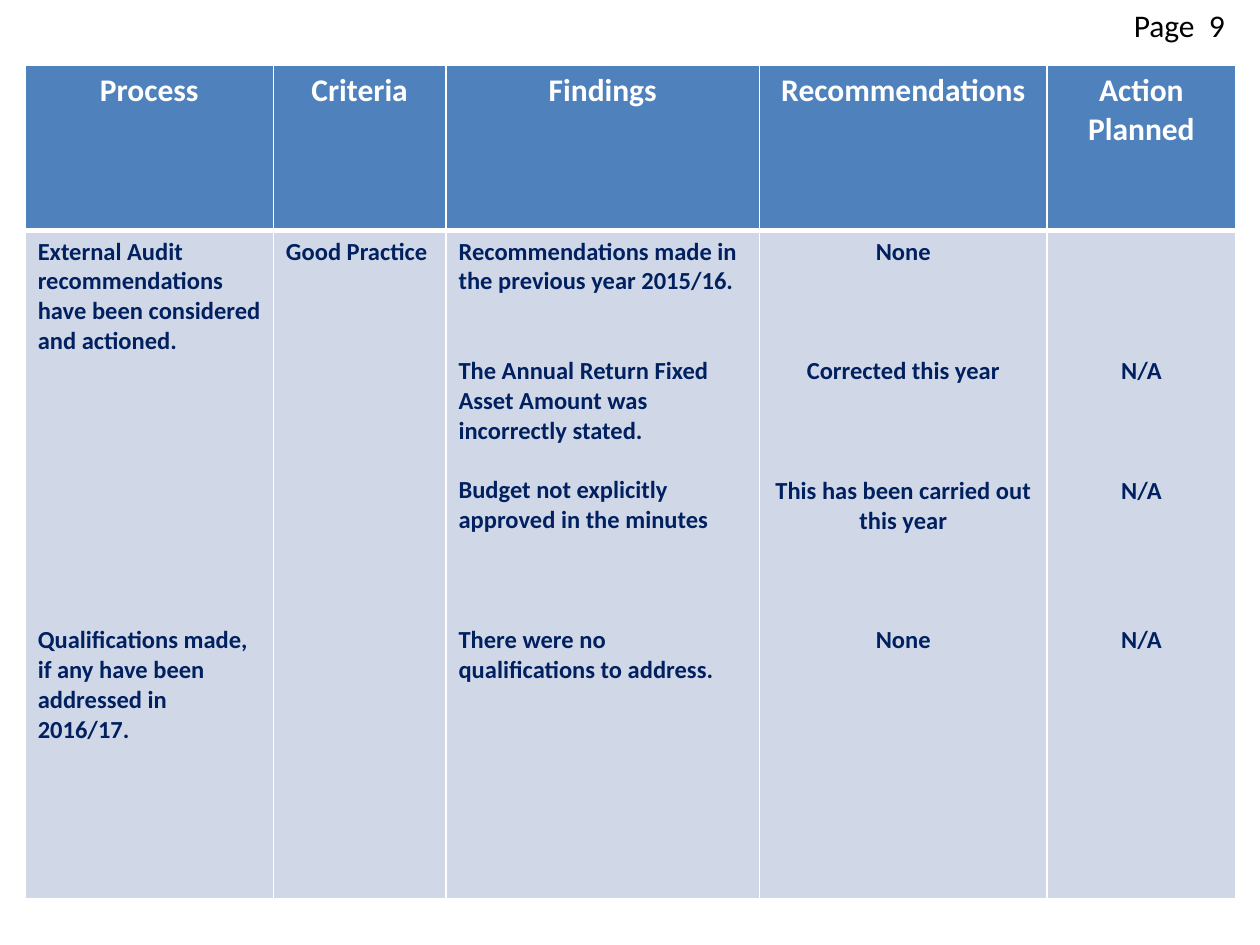
from lxml.etree import SubElement
from pptx import Presentation
from pptx.dml.color import RGBColor
from pptx.enum.text import PP_ALIGN
from pptx.oxml.ns import qn
from pptx.util import Inches, Pt

COLORS = {
    "header": "4F81BD",
    "body": "D0D8E8",
    "border": "FFFFFF",
    "header_text": "FFFFFF",
    "body_text": "002060",
    "page_text": "000000",
}
FONT = "Calibri"
BODY_LINE = 17.09
CELL_MARGIN = 0.05
ROW_HEIGHTS = (1.31, 5.3)

COLUMNS = [
    ("Process", 1.97, PP_ALIGN.LEFT, [
        (0, "External Audit"),
        (0, "recommendations have been considered and actioned."),
        (9, "Qualifications made, if any have been addressed in 2016/17."),
    ]),
    ("Criteria", 1.37, PP_ALIGN.LEFT, [(0, "Good Practice")]),
    ("Findings", 2.49, PP_ALIGN.LEFT, [
        (0, "Recommendations made in the previous year 2015/16."),
        (2, "The Annual Return Fixed Asset Amount was incorrectly stated."),
        (1, "Budget not explicitly approved in the minutes"),
        (3, "There were no qualifications to address."),
    ]),
    ("Recommendations", 2.28, PP_ALIGN.CENTER, [
        (0, "None"),
        (3, "Corrected this year"),
        (3, "This has been carried out this year"),
        (3, "None"),
    ]),
    ("Action Planned", 1.5, PP_ALIGN.CENTER, [(4, "N/A"), (3, "N/A"), (4, "N/A")]),
]


def add_run(paragraph, text, size, color, bold=False):
    run = paragraph.add_run()
    run.text = text
    run.font.name = FONT
    run.font.size = Pt(size)
    run.font.bold = bold
    run.font.color.rgb = RGBColor.from_string(COLORS[color])


def set_borders(cell, widths):
    properties = cell._tc.get_or_add_tcPr()
    for position, (side, width) in enumerate(widths.items()):
        line = SubElement(properties, qn(f"a:ln{side}"), w=str(Pt(width)))
        fill = SubElement(line, qn("a:solidFill"))
        SubElement(fill, qn("a:srgbClr"), val=COLORS["border"])
        properties.insert(position, line)


def fill_cell(cell, entries, alignment, size, fill, color, borders):
    cell.fill.solid()
    cell.fill.fore_color.rgb = RGBColor.from_string(COLORS[fill])
    set_borders(cell, borders)
    first_gap = entries[0][0]
    cell.margin_top = Inches(CELL_MARGIN) + Pt(first_gap * BODY_LINE)
    for index, (gap, text) in enumerate(entries):
        if index == 0:
            paragraph = cell.text_frame.paragraphs[0]
        else:
            paragraph = cell.text_frame.add_paragraph()
            paragraph.space_before = Pt(gap * BODY_LINE)
        paragraph.alignment = alignment
        add_run(paragraph, text, size, color, bold=True)


def add_audit_table(slide, left, top, width, height):
    table = slide.shapes.add_table(
        len(ROW_HEIGHTS), len(COLUMNS), left, top, width, height
    ).table
    for row, row_height in zip(table.rows, ROW_HEIGHTS):
        row.height = Inches(row_height)
    for index, (heading, column_width, alignment, entries) in enumerate(COLUMNS):
        table.columns[index].width = Inches(column_width)
        fill_cell(table.cell(0, index), [(0, heading)], PP_ALIGN.CENTER, 18,
                  "header", "header_text", {"L": 1, "R": 1, "T": 1, "B": 3})
        fill_cell(table.cell(1, index), entries, alignment, 14,
                  "body", "body_text", {"L": 1, "R": 1, "T": 3, "B": 1})


def add_page_label(slide, left, top, width, height):
    text_frame = slide.shapes.add_textbox(left, top, width, height).text_frame
    text_frame.word_wrap = True
    add_run(text_frame.paragraphs[0], "Page  9", 18, "page_text")


def main():
    presentation = Presentation()
    presentation.slide_width = Inches(10)
    presentation.slide_height = Inches(7.5)
    slide = presentation.slides.add_slide(presentation.slide_layouts[6])
    add_audit_table(slide, Inches(0.2), Inches(0.52), Inches(9.61), Inches(6.61))
    add_page_label(slide, Inches(8.9), Inches(0), Inches(1.1), Inches(0.4))
    presentation.save("out.pptx")


if __name__ == "__main__":
    main()
